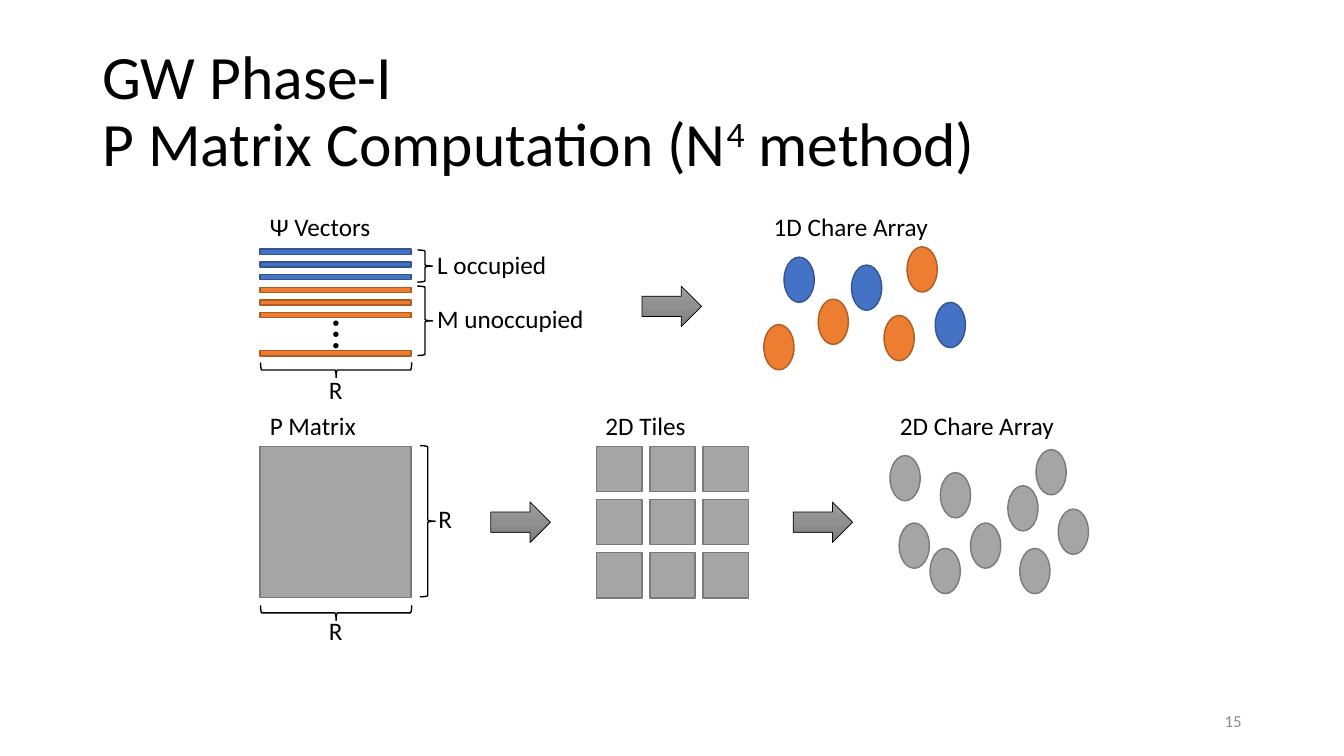
from copy import deepcopy

from pptx import Presentation
from pptx.dml.color import RGBColor
from pptx.enum.shapes import MSO_SHAPE
from pptx.enum.text import MSO_ANCHOR, MSO_AUTO_SIZE, PP_ALIGN
from pptx.oxml.ns import qn
from pptx.util import Cm, Pt

RECT = MSO_SHAPE.RECTANGLE
OVAL = MSO_SHAPE.OVAL
BRACE = MSO_SHAPE.RIGHT_BRACE
ARROW = MSO_SHAPE.RIGHT_ARROW
MIDDLE = MSO_ANCHOR.MIDDLE
TOP = MSO_ANCHOR.TOP
LEFT = PP_ALIGN.LEFT
CENTER = PP_ALIGN.CENTER
RIGHT = PP_ALIGN.RIGHT
FIT = MSO_AUTO_SIZE.SHAPE_TO_FIT_TEXT

FONT = "Calibri"
BLACK = RGBColor(0x00, 0x00, 0x00)
PAGE_GRAY = RGBColor(0x8C, 0x8C, 0x8C)
BLUE = (RGBColor(0x44, 0x72, 0xC4), RGBColor(0x32, 0x54, 0x91))
ORANGE = (RGBColor(0xED, 0x7D, 0x31), RGBColor(0xAF, 0x5C, 0x24))
GRAY = (RGBColor(0xA5, 0xA5, 0xA5), RGBColor(0x7A, 0x7A, 0x7A))
ARROW_STOPS = (
    (0, RGBColor(0x9D, 0x9D, 0x9D)),
    (0.5, RGBColor(0x90, 0x90, 0x90)),
    (1, RGBColor(0x7C, 0x7C, 0x7C)),
)

MATRIX_LEFT, MATRIX_TOP, MATRIX_SIZE = 6.55, 11.25, 3.81
BAR_TOP, BAR_STEP, BAR_HEIGHT = 6.28, 0.32, 0.13
TILE_LEFT, TILE_STEP, TILE_SIZE = 15.04, 1.34, 1.14
CHARE_WIDTH, CHARE_HEIGHT = 0.76, 1.14
BRACE_WIDTH = 0.38
UPPER_LABEL_TOP, LOWER_LABEL_TOP = 5.21, 10.21

BARS = ((BLUE, (0, 1, 2)), (ORANGE, (3, 4, 5, 8)))
VECTOR_CHARES = (
    (BLUE, ((19.76, 6.48), (21.46, 6.68), (23.57, 7.62))),
    (ORANGE, ((19.25, 8.18), (20.62, 7.54), (22.28, 7.95), (22.86, 6.22))),
)
MATRIX_CHARES = (
    (GRAY, ((22.43, 11.48), (23.7, 11.91), (25.4, 12.24),
            (26.11, 11.33), (25.7, 13.82), (26.67, 12.83),
            (22.66, 13.18), (23.44, 13.82), (24.46, 13.18))),
)
LABELS = (
    ("Ψ Vectors", MATRIX_LEFT, UPPER_LABEL_TOP, 3.12),
    ("1D Chare Array", 19.25, UPPER_LABEL_TOP, 4.47),
    ("L occupied", 10.77, 6.17, 3.28),
    ("M unoccupied", 10.77, 7.52, 4.24),
    ("R", 8.04, 9.32, 0.86),
    ("P Matrix", MATRIX_LEFT, LOWER_LABEL_TOP, 2.72),
    ("2D Tiles", 15.01, LOWER_LABEL_TOP, 2.57),
    ("2D Chare Array", 22.43, LOWER_LABEL_TOP, 4.47),
    ("R", 10.8, 12.57, 0.86),
    ("R", 8.04, 15.39, 0.86),
)
BRACES = (
    (10.52, 6.3, 0.81, 0),
    (10.52, 7.21, 1.75, 0),
    (8.28, 7.42, MATRIX_SIZE, 90),
    (10.59, 11.23, MATRIX_SIZE, 0),
    (8.28, 13.54, MATRIX_SIZE, 90),
)
ARROWS = ((16.18, 7.21), (12.37, 12.65), (19.99, 12.65))


def add_box(shapes, left, top, width, height, anchor=TOP, align=LEFT):
    sp = shapes.add_textbox(Cm(left), Cm(top), Cm(width), Cm(height))
    tf = sp.text_frame
    tf.word_wrap = True
    tf.vertical_anchor = anchor
    p = tf.paragraphs[0]
    p.alignment = align
    return sp, p


def add_run(p, text, size, color=BLACK):
    r = p.add_run()
    r.text = text
    r.font.name = FONT
    r.font.size = Pt(size)
    r.font.color.rgb = color
    return r


def fit_box(sp):
    sp.text_frame.word_wrap = False
    sp.text_frame.auto_size = FIT


def add_title(shapes):
    sp, p = add_box(shapes, 2.33, 1.01, 29.21, 3.68, MIDDLE)
    p.line_spacing = 0.9
    add_run(p, "GW Phase-I", 44)
    p.add_line_break()
    add_run(p, "P Matrix Computation (N", 44)
    power = add_run(p, "4", 44)
    power.font._element.set("baseline", "30000")
    add_run(p, " method)", 44)


def add_page_number(shapes):
    sp, p = add_box(shapes, 23.92, 17.65, 7.62, 1.01, MIDDLE, RIGHT)
    add_run(p, "15", 12, PAGE_GRAY)


def add_label(shapes, text, left, top, width):
    sp, p = add_box(shapes, left, top, width, 1.02)
    fit_box(sp)
    add_run(p, text, 18)


def add_dots(shapes):
    sp, p = add_box(shapes, 7.92, 7.92, 1.88, 1.04, MIDDLE, CENTER)
    fit_box(sp)
    sp.element.txBody.bodyPr.set("vert", "vert")
    add_run(p, "…", 32)


def add_outline(shapes, kind, left, top, width, height, color, weight):
    sp = shapes.add_shape(kind, Cm(left), Cm(top), Cm(width), Cm(height))
    sp.shadow.inherit = False
    sp.line.color.rgb = color
    sp.line.width = Pt(weight)
    return sp


def add_solid(shapes, kind, left, top, width, height, colors):
    fill, line = colors
    sp = add_outline(shapes, kind, left, top, width, height, line, 1)
    sp.fill.solid()
    sp.fill.fore_color.rgb = fill


def add_brace(shapes, left, top, length, rotation):
    sp = add_outline(shapes, BRACE, left, top, BRACE_WIDTH, length, BLACK, 1)
    sp.fill.background()
    sp.rotation = rotation


def add_arrow(shapes, left, top):
    sp = add_outline(shapes, ARROW, left, top, 1.5, 1.02, BLACK, 0.5)
    sp.fill.gradient()
    sp.fill.gradient_angle = 270
    stop_list = sp.element.spPr.find(qn("a:gradFill")).find(qn("a:gsLst"))
    stop_list.insert(1, deepcopy(stop_list[0]))
    for stop, (position, color) in zip(sp.fill.gradient_stops, ARROW_STOPS):
        stop.position = position
        stop.color.rgb = color


def add_vectors(shapes):
    group = shapes.add_group_shape().shapes
    add_dots(group)
    for colors, rows in BARS:
        for row in rows:
            add_solid(group, RECT, MATRIX_LEFT, BAR_TOP + row * BAR_STEP,
                      MATRIX_SIZE, BAR_HEIGHT, colors)


def add_tiles(shapes):
    group = shapes.add_group_shape().shapes
    for row in range(3):
        for col in range(3):
            add_solid(group, RECT, TILE_LEFT + col * TILE_STEP,
                      MATRIX_TOP + row * TILE_STEP, TILE_SIZE, TILE_SIZE, GRAY)


def add_chares(shapes, chares):
    group = shapes.add_group_shape().shapes
    for colors, places in chares:
        for left, top in places:
            add_solid(group, OVAL, left, top, CHARE_WIDTH, CHARE_HEIGHT, colors)


def main():
    prs = Presentation()
    prs.slide_width, prs.slide_height = Cm(33.87), Cm(19.05)
    shapes = prs.slides.add_slide(prs.slide_layouts[6]).shapes
    add_title(shapes)
    add_page_number(shapes)
    add_solid(shapes, RECT, MATRIX_LEFT, MATRIX_TOP, MATRIX_SIZE, MATRIX_SIZE, GRAY)
    for brace in BRACES:
        add_brace(shapes, *brace)
    for label in LABELS:
        add_label(shapes, *label)
    for arrow in ARROWS:
        add_arrow(shapes, *arrow)
    add_vectors(shapes)
    add_tiles(shapes)
    add_chares(shapes, VECTOR_CHARES)
    add_chares(shapes, MATRIX_CHARES)
    prs.save("out.pptx")


if __name__ == "__main__":
    main()
